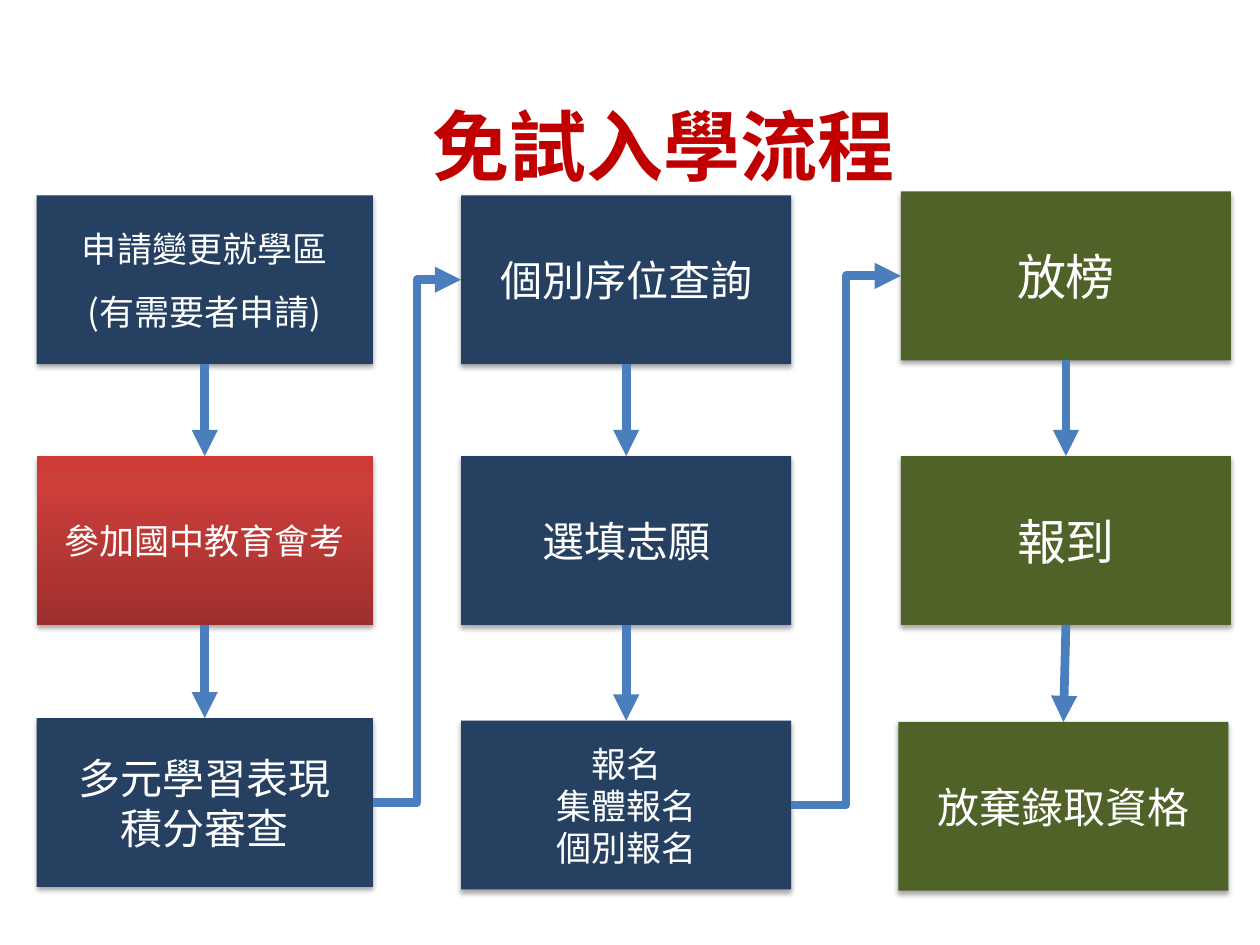
from copy import deepcopy

from lxml.etree import SubElement
from pptx import Presentation
from pptx.dml.color import RGBColor
from pptx.enum.shapes import MSO_CONNECTOR, MSO_SHAPE
from pptx.enum.text import MSO_ANCHOR, PP_ALIGN
from pptx.oxml.ns import qn
from pptx.util import Inches, Pt

FONT = "Noto Sans CJK SC"
COLORS = {
    "title": "C00000",
    "navy": "254061",
    "green": "4F6228",
    "arrow": "4B7EBC",
    "text": "FFFFFF",
    "shadow": "000000",
}
RED_GRADIENT = [(0, "9C2F2D"), (0.8, "CB3E3A"), (1, "CE3B37")]
BOX_HEIGHT = 1.34
TOP, LEFT, BOTTOM, RIGHT = range(4)

COLUMNS = [
    (2.67, [
        (0.29, 1.55, "navy", 20, 12, ["申請變更就學區", "(有需要者申請)"]),
        (0.29, 3.62, "red", 20, 0, ["參加國中教育會考"]),
        (0.29, 5.7, "navy", 24, 0, ["多元學習表現", "積分審查"]),
    ]),
    (2.62, [
        (3.66, 1.55, "navy", 24, 0, ["個別序位查詢"]),
        (3.66, 3.62, "navy", 24, 0, ["選填志願"]),
        (3.66, 5.72, "navy", 20, 0, ["報名", "集體報名", "個別報名"]),
    ]),
    (2.62, [
        (7.15, 1.52, "green", 28, 0, ["放榜"]),
        (7.15, 3.62, "green", 28, 0, ["報到"]),
        (7.13, 5.73, "green", 24, 0, ["放棄錄取資格"]),
    ]),
]


def rgb(name):
    return RGBColor.from_string(COLORS[name])


def add_line(paragraph, text, size, color, bold=False):
    paragraph.alignment = PP_ALIGN.CENTER
    run = paragraph.add_run()
    run.text = text
    run.font.size = Pt(size)
    run.font.bold = bold
    run.font.name = FONT
    run.font.color.rgb = rgb(color)
    SubElement(run.font._element, qn("a:ea"), typeface=FONT)


def add_title(slide, left, top, width, height):
    title = slide.shapes.title
    title.left, title.top = Inches(left), Inches(top)
    title.width, title.height = Inches(width), Inches(height)
    title.text_frame.vertical_anchor = MSO_ANCHOR.MIDDLE
    add_line(title.text_frame.paragraphs[0], "免試入學流程", 44, "title", True)


def fill_red(shape):
    shape.fill.gradient()
    shape.fill.gradient_angle = 90
    stop_list = shape._element.spPr.find(".//" + qn("a:gsLst"))
    stop_list.append(deepcopy(stop_list[-1]))
    for stop, (position, color) in zip(shape.fill.gradient_stops, RED_GRADIENT):
        stop.position = position
        stop.color.rgb = RGBColor.from_string(color)


def add_shadow(shape):
    shape.shadow.inherit = False
    effects = shape._element.spPr.find(qn("a:effectLst"))
    shadow = SubElement(
        effects, qn("a:outerShdw"), blurRad=str(Pt(3.1)), dist=str(Pt(1.8)),
        dir="5400000", rotWithShape="0",
    )
    color = SubElement(shadow, qn("a:srgbClr"), val=COLORS["shadow"])
    SubElement(color, qn("a:alpha"), val="35000")


def add_step(slide, left, top, width, fill, size, gap, lines):
    shape = slide.shapes.add_shape(
        MSO_SHAPE.RECTANGLE, Inches(left), Inches(top), Inches(width), Inches(BOX_HEIGHT)
    )
    if fill == "red":
        fill_red(shape)
    else:
        shape.fill.solid()
        shape.fill.fore_color.rgb = rgb(fill)
    shape.line.fill.background()
    add_shadow(shape)
    frame = shape.text_frame
    frame.word_wrap = True
    frame.vertical_anchor = MSO_ANCHOR.MIDDLE
    for index, line in enumerate(lines):
        paragraph = frame.add_paragraph() if index else frame.paragraphs[0]
        if index and gap:
            paragraph.space_before = Pt(gap)
        add_line(paragraph, line, size, "text")
    return shape


def add_arrow(slide, kind, start, start_side, end, end_side):
    connector = slide.shapes.add_connector(kind, 0, 0, 0, 0)
    connector.begin_connect(start, start_side)
    connector.end_connect(end, end_side)
    connector.line.width = Pt(5)
    connector.line.color.rgb = rgb("arrow")
    SubElement(connector.line._get_or_add_ln(), qn("a:tailEnd"), type="triangle")
    SubElement(connector._element.spPr, qn("a:effectLst"))


def add_column(slide, width, steps):
    boxes = [
        add_step(slide, left, top, width, *content) for left, top, *content in steps
    ]
    for upper, lower in zip(boxes, boxes[1:]):
        add_arrow(slide, MSO_CONNECTOR.STRAIGHT, upper, BOTTOM, lower, TOP)
    return boxes


def main():
    presentation = Presentation()
    presentation.slide_width, presentation.slide_height = Inches(10), Inches(7.5)
    slide = presentation.slides.add_slide(presentation.slide_layouts[5])
    add_title(slide, 0.77, 0.52, 9, 1.25)
    columns = [add_column(slide, width, steps) for width, steps in COLUMNS]
    for current, following in zip(columns, columns[1:]):
        add_arrow(slide, MSO_CONNECTOR.ELBOW, current[-1], RIGHT, following[0], LEFT)
    presentation.save("out.pptx")


if __name__ == "__main__":
    main()
